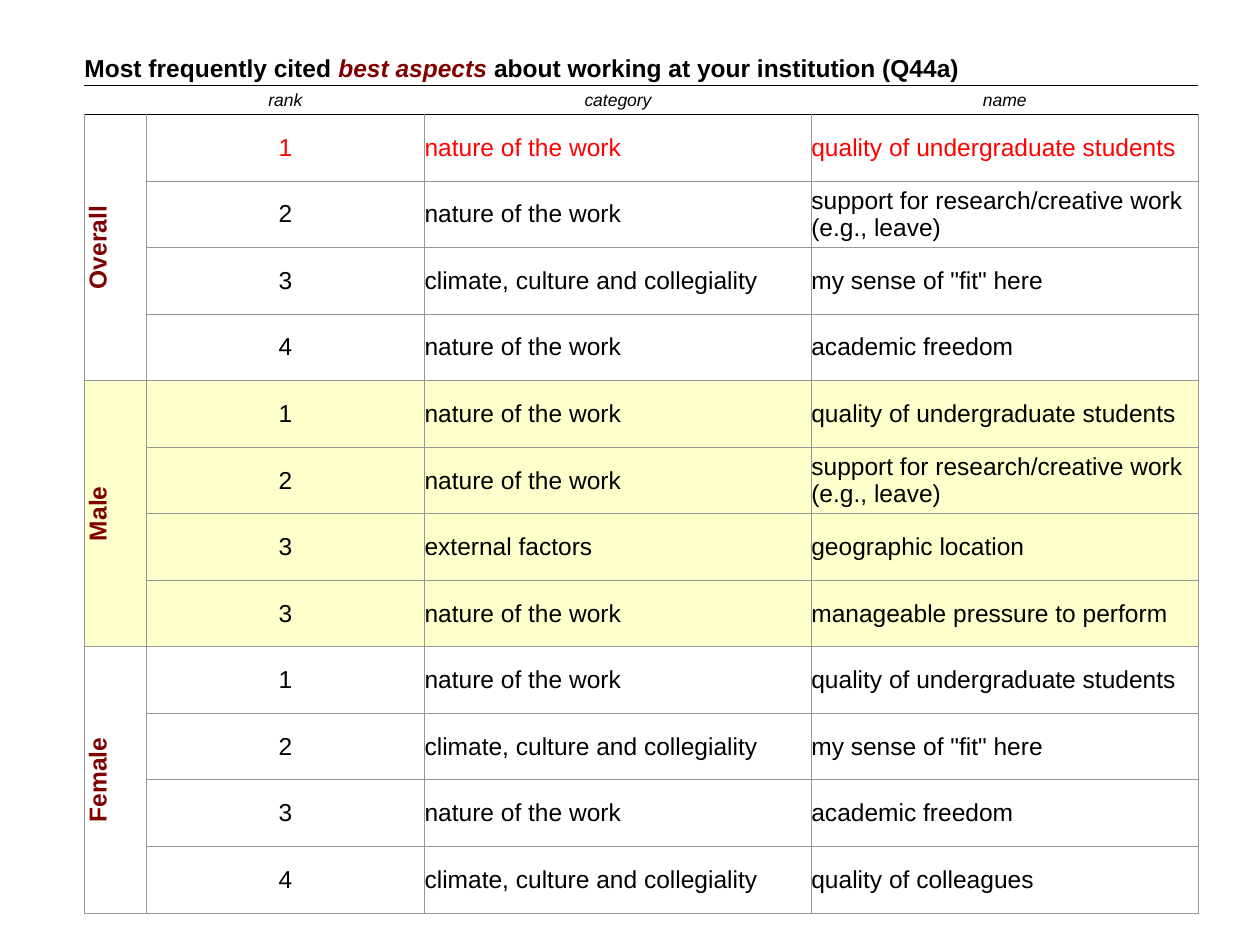
from lxml.etree import SubElement
from pptx import Presentation
from pptx.dml.color import RGBColor
from pptx.enum.text import MSO_ANCHOR as ANCHOR, PP_ALIGN as ALIGN
from pptx.oxml.ns import qn
from pptx.util import Inches, Pt

BLACK, GRAY, MAROON, RED, YELLOW = "000000", "969696", "800000", "FF0000", "FFFFCC"

LEFT, TOP, HEIGHT = 0.67, 0.42, 6.83
COL_WIDTHS = [0.49, 2.21, 3.07, 3.07]
HEAD_HEIGHTS = [0.26, 0.23]

TITLE = [
    ("Most frequently cited ", BLACK, False),
    ("best aspects", MAROON, True),
    (" about working at your institution (Q44a)", BLACK, False),
]
HEADERS = ["", "rank", "category", "name"]

WORK = "nature of the work"
CLIMATE = "climate, culture and collegiality"
STUDENTS = "quality of undergraduate students"
SUPPORT = "support for research/creative work (e.g., leave)"
FIT = 'my sense of "fit" here'
FREEDOM = "academic freedom"

# Group label, row fill, ranked answers
GROUPS = [
    ("Overall", None, [
        ("1", WORK, STUDENTS),
        ("2", WORK, SUPPORT),
        ("3", CLIMATE, FIT),
        ("4", WORK, FREEDOM),
    ]),
    ("Male", YELLOW, [
        ("1", WORK, STUDENTS),
        ("2", WORK, SUPPORT),
        ("3", "external factors", "geographic location"),
        ("3", WORK, "manageable pressure to perform"),
    ]),
    ("Female", None, [
        ("1", WORK, STUDENTS),
        ("2", CLIMATE, FIT),
        ("3", WORK, FREEDOM),
        ("4", CLIMATE, "quality of colleagues"),
    ]),
]


def rgb(color):
    return RGBColor.from_string(color)


def set_font(font, size, color=BLACK, bold=False, italic=False):
    font.name = "Arial"
    font.size = Pt(size)
    font.color.rgb = rgb(color)
    font.bold = bold
    font.italic = italic


def set_borders(cell, left=None, right=None, top=None, bottom=None):
    """Draw the given sides in their colours and hide the others."""
    tc_pr = cell._tc.get_or_add_tcPr()
    for side, color in zip("LRTB", (left, right, top, bottom)):
        ln = SubElement(tc_pr, qn(f"a:ln{side}"), w=str(Pt(0.5)))
        if color:
            fill = SubElement(ln, qn("a:solidFill"))
            SubElement(fill, qn("a:srgbClr"), val=color)
        else:
            SubElement(ln, qn("a:noFill"))


def format_cell(cell, fill=None, **borders):
    set_borders(cell, **borders)
    if fill:
        cell.fill.solid()
        cell.fill.fore_color.rgb = rgb(fill)
    else:
        cell.fill.background()
    cell.margin_left = cell.margin_right = cell.margin_top = cell.margin_bottom = 0
    cell.vertical_anchor = ANCHOR.MIDDLE


def write(cell, text, size=14, align=ALIGN.LEFT, **style):
    p = cell.text_frame.paragraphs[0]
    p.alignment = align
    set_font(p.font, size, **style)
    if text:
        p.add_run().text = text


def add_grid(slide, row_count):
    """Add the unstyled table with its column widths and row heights."""
    body_height = (HEIGHT - sum(HEAD_HEIGHTS)) / row_count
    heights = HEAD_HEIGHTS + [body_height] * row_count
    table = slide.shapes.add_table(
        len(heights), len(COL_WIDTHS), Inches(LEFT), Inches(TOP),
        Inches(sum(COL_WIDTHS)), Inches(HEIGHT)).table
    table.first_row = table.horz_banding = False
    for column, width in zip(table.columns, COL_WIDTHS):
        column.width = Inches(width)
    for row, height in zip(table.rows, heights):
        row.height = Inches(height)
    return table


def fill_heading(table):
    for cell in table.rows[0].cells:
        format_cell(cell, bottom=BLACK)
    title = table.cell(0, 0)
    title.merge(table.cell(0, len(COL_WIDTHS) - 1))
    p = title.text_frame.paragraphs[0]
    for text, color, italic in TITLE:
        r = p.add_run()
        r.text = text
        set_font(r.font, 14, color, bold=True, italic=italic)
    for cell, text in zip(table.rows[1].cells, HEADERS):
        format_cell(cell, top=BLACK, bottom=BLACK)
        write(cell, text, 10, ALIGN.CENTER, italic=True)


def fill_group(table, first, label, fill, answers):
    last = first + len(answers) - 1
    for row, answer in enumerate(answers, first):
        is_top = row == len(HEAD_HEIGHTS)
        for cell in table.rows[row].cells:
            format_cell(cell, fill, left=GRAY, right=GRAY,
                        top=BLACK if is_top else GRAY, bottom=GRAY)
        for col, text in enumerate(answer, 1):
            write(table.cell(row, col), text,
                  align=ALIGN.CENTER if col == 1 else ALIGN.LEFT,
                  color=RED if is_top else BLACK)
    # Group label reads upwards along the merged first column
    head = table.cell(first, 0)
    head.merge(table.cell(last, 0))
    head._tc.get_or_add_tcPr().set("vert", "vert270")
    write(head, label, align=ALIGN.CENTER, color=MAROON, bold=True)


def main():
    prs = Presentation()
    prs.slide_width, prs.slide_height = Inches(10), Inches(7.5)
    slide = prs.slides.add_slide(prs.slide_layouts[6])

    table = add_grid(slide, sum(len(answers) for _, _, answers in GROUPS))
    fill_heading(table)
    first = len(HEAD_HEIGHTS)
    for label, fill, answers in GROUPS:
        fill_group(table, first, label, fill, answers)
        first += len(answers)

    prs.save("out.pptx")


if __name__ == "__main__":
    main()
